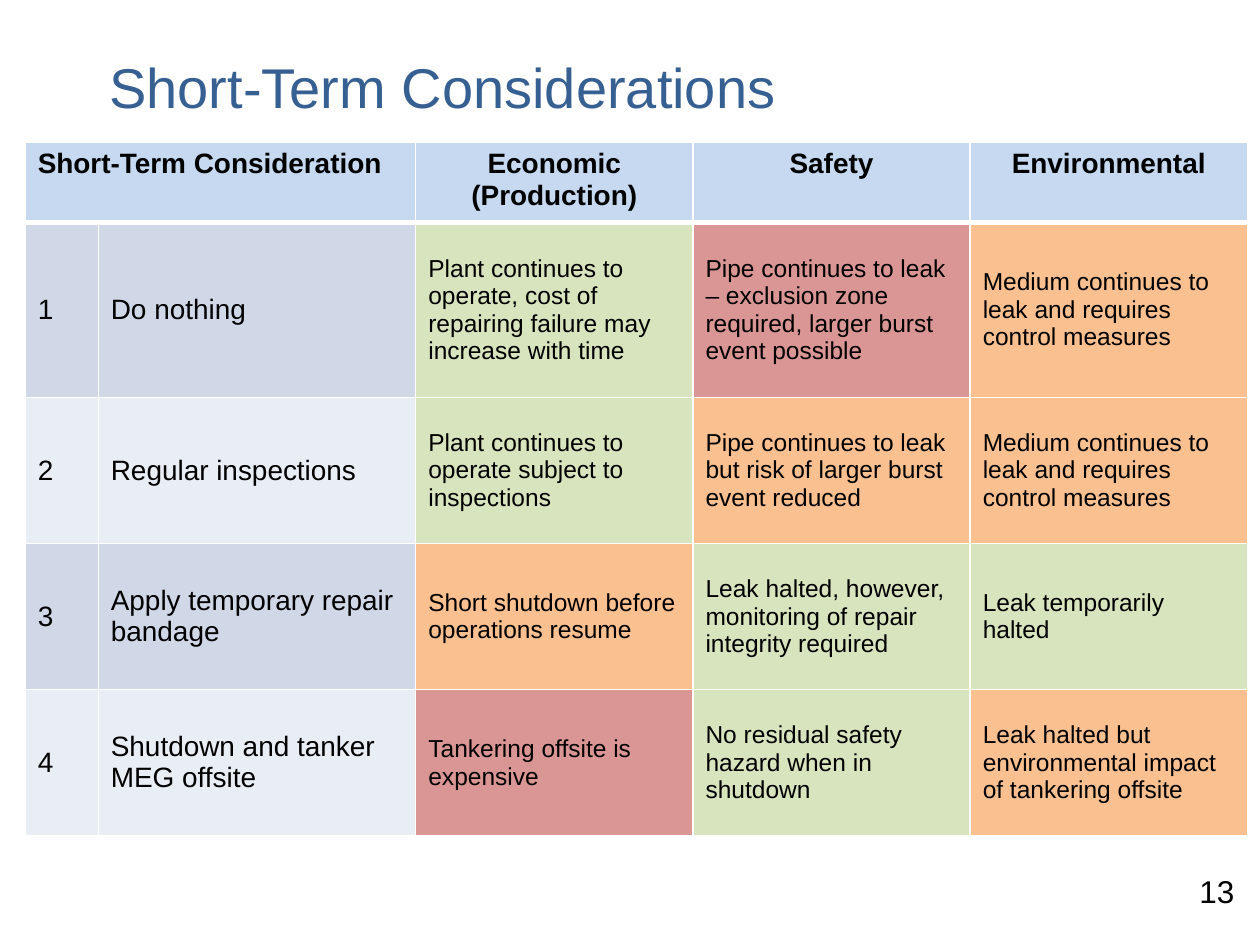
import pptx
import pptx.util
import pptx.dml.color
import pptx.enum.text
import pptx.oxml
import pptx.oxml.ns

ALIGN = pptx.enum.text.PP_ALIGN
ANCHOR = pptx.enum.text.MSO_ANCHOR
WIDTH, HEIGHT = pptx.util.Inches(10), pptx.util.Inches(7.5)
COLORS = {
    "title": "376092", "text": "000000", "border": "FFFFFF", "header": "C6D9F1",
    "odd": "D0D8E8", "even": "E9EDF4",
    "good": "D7E4BD", "fair": "FAC090", "poor": "D99694",
}
COLUMNS = [5.8, 25.2, 22, 22, 22]
ROWS = [8.4, 18.53, 15.47, 15.47, 15.47]
HEADERS = ["Short-Term Consideration", "", "Economic (Production)", "Safety", "Environmental"]
OPTIONS = [
    ("Do nothing", [
        ("good", "Plant continues to operate, cost of repairing failure may increase with time"),
        ("poor", "Pipe continues to leak – exclusion zone required, larger burst event possible"),
        ("fair", "Medium continues to leak and requires control measures")]),
    ("Regular inspections", [
        ("good", "Plant continues to operate subject to inspections"),
        ("fair", "Pipe continues to leak but risk of larger burst event reduced"),
        ("fair", "Medium continues to leak and requires control measures")]),
    ("Apply temporary repair bandage", [
        ("fair", "Short shutdown before operations resume"),
        ("good", "Leak halted, however, monitoring of repair integrity required"),
        ("good", "Leak temporarily halted")]),
    ("Shutdown and tanker MEG offsite", [
        ("poor", "Tankering offsite is expensive"),
        ("good", "No residual safety hazard when in shutdown"),
        ("fair", "Leak halted but environmental impact of tankering offsite")]),
]


def across(percent):
    """Return a share of the slide's width."""
    return round(WIDTH * percent / 100)


def down(percent):
    """Return a share of the slide's height."""
    return round(HEIGHT * percent / 100)


def write(text_frame, text, size=16, color="text", bold=False, align=ALIGN.LEFT):
    """Write one formatted paragraph into a text frame."""
    paragraph = text_frame.paragraphs[0]
    paragraph.alignment = align
    run = paragraph.add_run()
    run.text = text
    run.font.name = "Arial"
    run.font.size = pptx.util.Pt(size)
    run.font.bold = bold
    run.font.color.rgb = pptx.dml.color.RGBColor.from_string(COLORS[color])


def add_text(slide, left, top, width, height, text, anchor=ANCHOR.TOP, **text_format):
    """Add a text box placed by percentages of the slide."""
    shape = slide.shapes.add_textbox(across(left), down(top), across(width), down(height))
    shape.text_frame.word_wrap = True
    shape.text_frame.vertical_anchor = anchor
    write(shape.text_frame, text, **text_format)


def style_cell(cell, fill, top=1, bottom=1):
    """Fill a cell and draw its borders in points."""
    properties = cell._tc.get_or_add_tcPr()
    for side, points in (("L", 1), ("R", 1), ("T", top), ("B", bottom)):
        properties.append(pptx.oxml.parse_xml(
            f'<a:ln{side} {pptx.oxml.ns.nsdecls("a")} w="{pptx.util.Pt(points)}">'
            f'<a:solidFill><a:srgbClr val="{COLORS["border"]}"/></a:solidFill></a:ln{side}>'))
    cell.fill.solid()
    cell.fill.fore_color.rgb = pptx.dml.color.RGBColor.from_string(COLORS[fill])


def fill_header(table):
    """Fill the header row and merge its first two cells."""
    table.cell(0, 0).merge(table.cell(0, 1))
    for column, text in enumerate(HEADERS):
        cell = table.cell(0, column)
        style_cell(cell, "header", bottom=3)
        if text:
            align = ALIGN.CENTER if column else ALIGN.LEFT
            write(cell.text_frame, text, bold=True, align=align)


def fill_option(table, row, option, ratings):
    """Fill one row with an option and its rated effects."""
    band = "odd" if row % 2 else "even"
    entries = [(band, str(row), 16), (band, option, 16)]
    entries += [(rating, text, 14) for rating, text in ratings]
    for column, (fill, text, size) in enumerate(entries):
        cell = table.cell(row, column)
        cell.vertical_anchor = ANCHOR.MIDDLE
        style_cell(cell, fill, top=3 if row == 1 else 1)
        write(cell.text_frame, text, size=size)


def add_considerations(slide):
    """Add the table of options."""
    table = slide.shapes.add_table(
        len(ROWS), len(COLUMNS), across(2), down(15.07),
        across(sum(COLUMNS)), down(sum(ROWS))).table
    for column, share in zip(table.columns, COLUMNS):
        column.width = across(share)
    for row, share in zip(table.rows, ROWS):
        row.height = down(share)
    fill_header(table)
    for row, (option, ratings) in enumerate(OPTIONS, start=1):
        fill_option(table, row, option, ratings)


def main():
    """Build and save the slide."""
    presentation = pptx.Presentation()
    presentation.slide_width, presentation.slide_height = WIDTH, HEIGHT
    slide = presentation.slides.add_slide(presentation.slide_layouts[6])
    add_text(slide, 7.7, 2.93, 84.6, 12.27, "Short-Term Considerations",
             anchor=ANCHOR.MIDDLE, size=32, color="title")
    add_considerations(slide)
    add_text(slide, 94.2, 91.6, 5.8, 5.33, "13", size=18)
    presentation.save("out.pptx")


if __name__ == "__main__":
    main()
